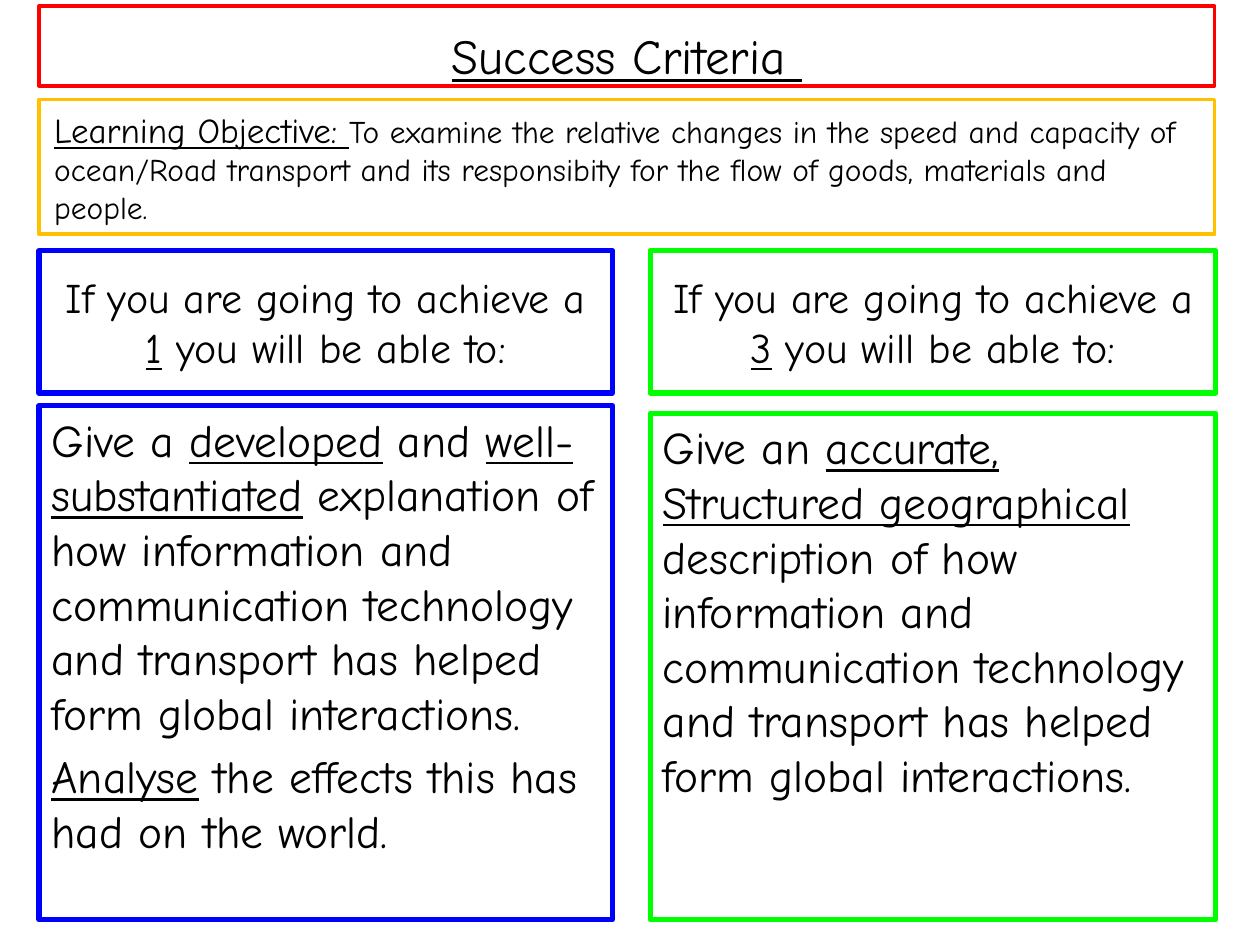
from pptx import Presentation
from pptx.dml.color import RGBColor
from pptx.enum import shapes, text
from pptx.util import Inches, Pt

FONT = "Comic Neue"
LEFT, FULL_WIDTH = 0.31, 9.33
HEAD_TOP, HEAD_HEIGHT, BOTTOM = 1.99, 1.13, 7.3


def rgb(value):
    return RGBColor.from_string(value)


def add_box(slide, at, color, weight, insets=(0.1, 0.05),
            anchor=text.MSO_ANCHOR.TOP, wrap=True):
    """Add a white outlined rectangle and return its text frame."""
    sp = slide.shapes.add_shape(shapes.MSO_SHAPE.RECTANGLE,
                                *(Inches(v) for v in at))
    sp.shadow.inherit = False
    sp.fill.solid()
    sp.fill.fore_color.rgb = rgb("FFFFFF")
    sp.line.color.rgb = rgb(color)
    sp.line.width = Pt(weight)
    tf = sp.text_frame
    tf.word_wrap = wrap
    tf.vertical_anchor = anchor
    tf.margin_left = tf.margin_right = Inches(insets[0])
    tf.margin_top = tf.margin_bottom = Inches(insets[1])
    return tf


def add_run(p, words, size, underline=False):
    r = p.add_run()
    r.text = words
    r.font.name = FONT
    r.font.size = Pt(size)
    r.font.underline = underline
    r.font.color.rgb = rgb("000000")


def write(tf, paragraphs, size, align=text.PP_ALIGN.LEFT, before=0):
    """Fill a frame with paragraphs, each a list of (words, underlined)."""
    for i, runs in enumerate(paragraphs):
        p = tf.paragraphs[0] if i == 0 else tf.add_paragraph()
        p.alignment = align
        p.space_before = Pt(before)
        for words, underline in runs:
            add_run(p, words, size, underline)


def add_level(slide, left, width, color, grade, body_top, criteria, before=0):
    """Add one grade's heading box and its criteria box."""
    tf = add_box(slide, (left, body_top, width, BOTTOM - body_top), color, 3)
    write(tf, criteria, 26, before=before)
    tf = add_box(slide, (left, HEAD_TOP, width, HEAD_HEIGHT), color, 3,
                 anchor=text.MSO_ANCHOR.MIDDLE)
    write(tf, [[("If you are going to achieve a ", False), (grade, True),
                (" you will be able to:", False)]], 24, text.PP_ALIGN.CENTER)


def add_objective(slide):
    tf = add_box(slide, (LEFT, 0.79, FULL_WIDTH, 1.07), "FFC000", 2.25,
                 (0.12, 0.07))
    p = tf.paragraphs[0]
    p.alignment = text.PP_ALIGN.LEFT
    add_run(p, "Learning Objective: ", 20, True)
    add_run(p, "To examine the relative changes in the speed and capacity of "
               "ocean/Road transport and its responsibity for the flow of "
               "goods, materials and people.", 18)


def add_title(slide):
    tf = add_box(slide, (LEFT, 0.05, FULL_WIDTH, 0.63), "FF0000", 2.25,
                 (0.12, 0.07), wrap=False)
    write(tf, [[("Success Criteria ", True)]], 28, text.PP_ALIGN.CENTER)
    tf.paragraphs[0].line_spacing = 1.17


def main():
    prs = Presentation()
    prs.slide_width, prs.slide_height = Inches(10), Inches(7.5)
    slide = prs.slides.add_slide(prs.slide_layouts[6])

    # Criteria columns
    shared = (" of how information and communication technology and "
              "transport has helped form global interactions.")
    add_level(slide, LEFT, 4.55, "0000FF", "1", 3.22, [
        [("Give a ", False), ("developed", True), (" and ", False),
         ("well-substantiated", True), (" explanation" + shared, False)],
        [("Analyse", True),
         (" the effects this has had on the world.", False)],
    ], before=5.2)
    add_level(slide, 5.16, 4.49, "00FF00", "3", 3.28, [
        [("Give an ", False), ("accurate,", True)],
        [("Structured geographical", True),
         (" description" + shared, False)],
    ])

    # Banner boxes
    add_objective(slide)
    add_title(slide)

    prs.save("out.pptx")


if __name__ == "__main__":
    main()
